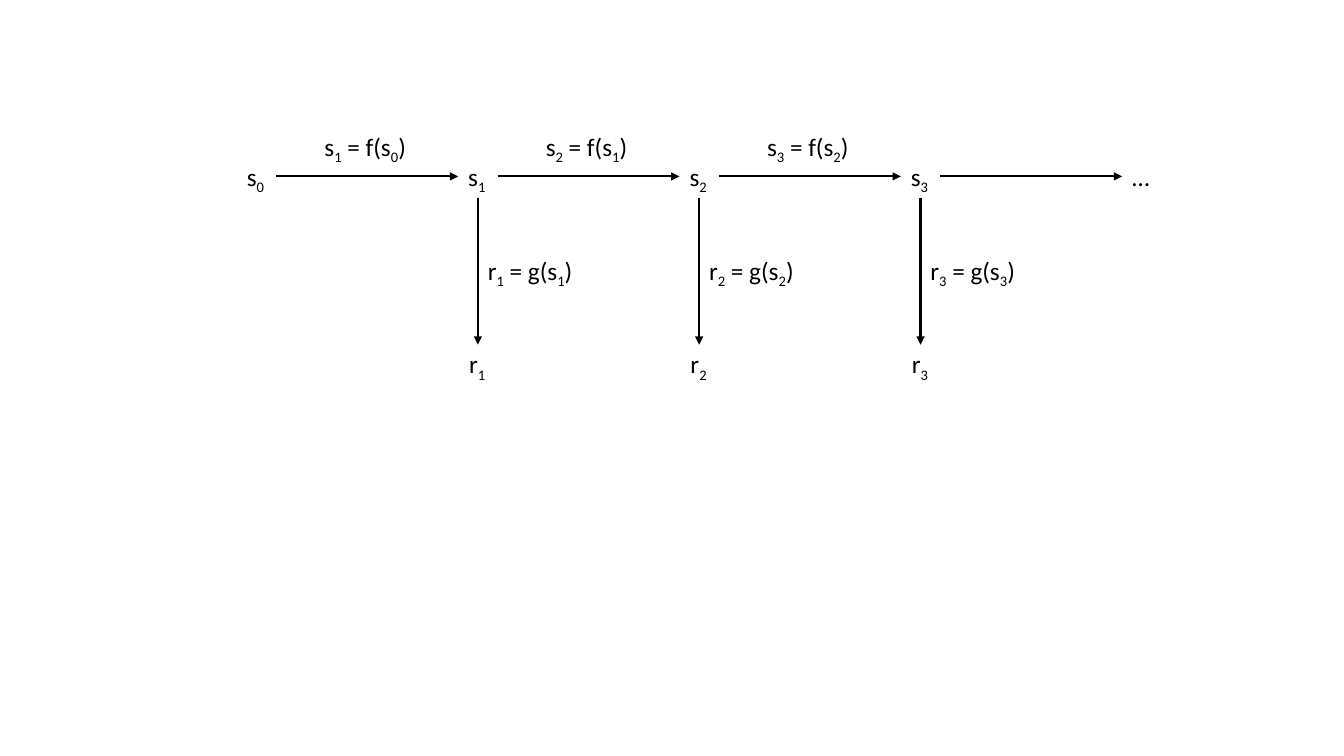
from itertools import groupby

from lxml.etree import SubElement
from pptx import Presentation
from pptx.dml.color import RGBColor as Rgb
from pptx.enum.shapes import MSO_CONNECTOR as Link
from pptx.enum.text import MSO_AUTO_SIZE as Fit
from pptx.oxml.ns import qn
from pptx.util import Inches, Pt

COLORS = {"ink": "000000", "page": "FFFFFF"}
FONT = {"name": "Calibri", "size": Pt(18)}
FRAME = {"word_wrap": False, "auto_size": Fit.SHAPE_TO_FIT_TEXT}
STEPS = 4
NODE = 0.39
HIGH = 0.4


def label(slide, text, left, top, width):
    box = slide.shapes.add_textbox(*map(Inches, (left, top, width, HIGH)))
    frame = box.text_frame
    for key, value in FRAME.items():
        setattr(frame, key, value)
    para = frame.paragraphs[0]
    for is_sub, chars in groupby(text, str.isdigit):
        run = para.add_run()
        run.text = "".join(chars)
        for key, value in FONT.items():
            setattr(run.font, key, value)
        run.font.color.rgb = Rgb.from_string(COLORS["ink"])
        if is_sub:
            run.font._element.set("baseline", "-25000")


def arrow(slide, *ends):
    link = slide.shapes.add_connector(Link.STRAIGHT, *map(Inches, ends))
    link.line.color.rgb = Rgb.from_string(COLORS["ink"])
    link.line.width = Pt(1.5)
    SubElement(link.line._get_or_add_ln(), qn("a:tailEnd"), type="triangle")
    SubElement(link._element.spPr, qn("a:effectLst"))


def states(slide, left, top, width):
    pitch = width / STEPS
    mid = top + HIGH / 2
    for i in range(STEPS):
        x = left + i * pitch
        label(slide, f"s{i}", x, top, NODE)
        arrow(slide, x + NODE, mid, x + pitch, mid)
        if i + 1 < STEPS:
            label(slide, f"s{i + 1} = f(s{i})", x + 0.77, top - 0.3, 1.04)
    label(slide, "…", left + width, top, 0.38)


def results(slide, left, top, width, height):
    pitch = width / STEPS
    for i in range(1, STEPS):
        x = left + i * pitch
        mid = x + NODE / 2
        arrow(slide, mid, top, mid, top + height)
        label(slide, f"r{i} = g(s{i})", mid, top + 0.52, 1.07)
        label(slide, f"r{i}", x + 0.01, top + height - 0.01, 0.38)


def main():
    deck = Presentation()
    deck.slide_width, deck.slide_height = Inches(13.33), Inches(7.5)
    slide = deck.slides.add_slide(deck.slide_layouts[6])
    fill = slide.background.fill
    fill.solid()
    fill.fore_color.rgb = Rgb.from_string(COLORS["page"])
    states(slide, 2.35, 1.55, 8.78)
    results(slide, 2.35, 1.96, 8.78, 1.46)
    deck.save("out.pptx")


if __name__ == "__main__":
    main()
